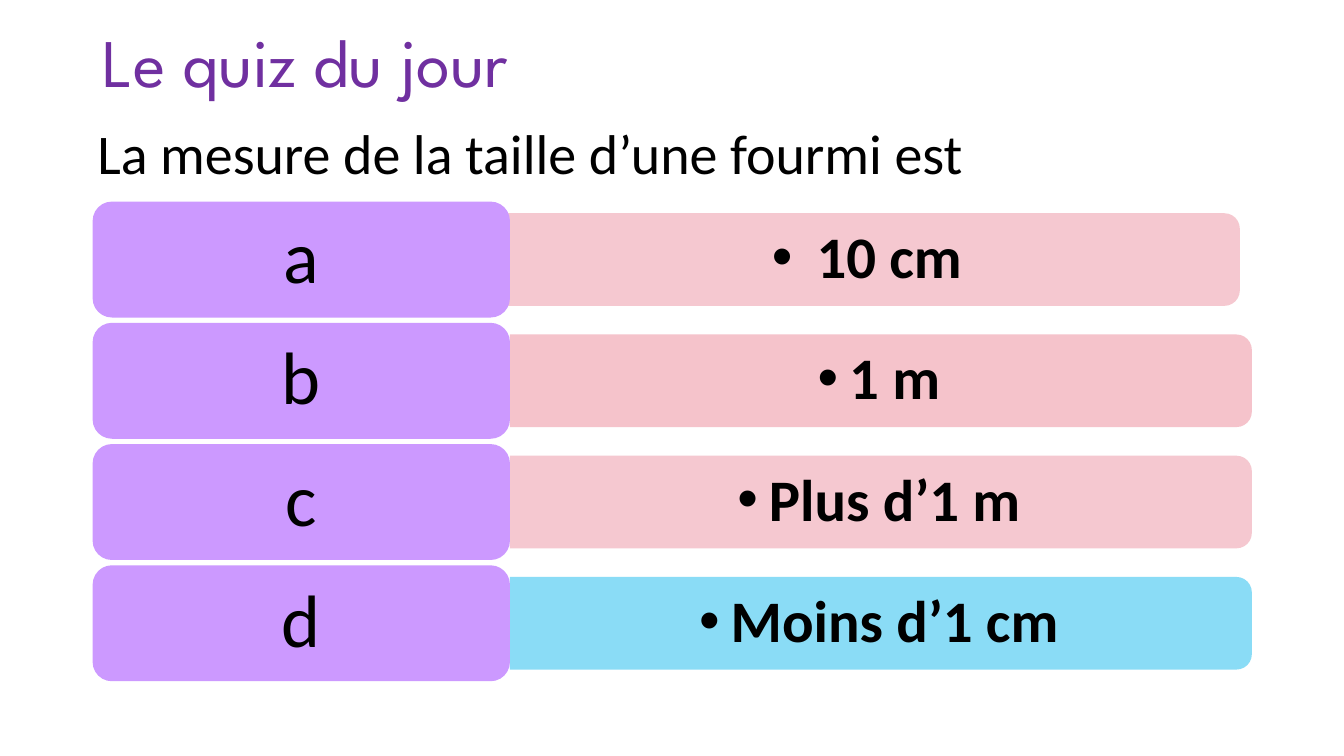
import pptx
import pptx.util
import pptx.dml.color
import pptx.enum.shapes
import pptx.enum.text
import pptx.oxml.ns
import lxml.etree

Pt = pptx.util.Pt
RGBColor = pptx.dml.color.RGBColor
MSO_SHAPE = pptx.enum.shapes.MSO_SHAPE
PP_ALIGN = pptx.enum.text.PP_ALIGN
MSO_ANCHOR = pptx.enum.text.MSO_ANCHOR
qn = pptx.oxml.ns.qn

PURPLE = RGBColor(0x70, 0x30, 0xA0)
LILAC = RGBColor(0xCC, 0x99, 0xFF)
PINK = RGBColor(0xF5, 0xC3, 0xCB)
BLUE = RGBColor(0x7E, 0xD9, 0xF6)
BLACK = RGBColor(0, 0, 0)

LABEL_LEFT, LABEL_WIDTH, LABEL_HEIGHT = 66.2, 298.1, 82.8
BAR_WIDTH, BAR_HEIGHT = 529.9, 66.2
ANSWER_WIDTH, ANSWER_HEIGHT = 527, 59.8
FIRST_TOP, ROW_PITCH = 144, 86.6

ANSWERS = [
    ("a", " 10 cm", 355.7, PINK, 90),
    ("b", "1 m", 364.3, PINK, 100),
    ("c", "Plus d’1 m", 364.3, PINK, 90),
    ("d", "Moins d’1 cm", 364.3, BLUE, 90),
]


class QuizSlide:
    def __init__(self, slide, font="Calibri", color=BLACK):
        self.slide = slide
        self.font = font
        self.color = color

    def set_text(self, shape, text, size, font=None, color=None, bold=False,
                 align=PP_ALIGN.CENTER, spacing=0.9, anchor=MSO_ANCHOR.MIDDLE):
        frame = shape.text_frame
        frame.word_wrap = True
        frame.vertical_anchor = anchor
        paragraph = frame.paragraphs[0]
        paragraph.text = text
        paragraph.alignment = align
        paragraph.line_spacing = spacing
        paragraph.font.name = font or self.font
        paragraph.font.size = Pt(size)
        paragraph.font.bold = bold
        paragraph.font.color.rgb = color or self.color
        return paragraph

    def text(self, left, top, width, height, text, size, **style):
        box = self.slide.shapes.add_textbox(Pt(left), Pt(top), Pt(width), Pt(height))
        return self.set_text(box, text, size, **style)

    def bullet(self, left, top, width, height, text, size):
        paragraph = self.text(left, top, width, height, text, size, bold=True)
        properties = paragraph._p.get_or_add_pPr()
        properties.set("marL", str(Pt(22.5)))
        properties.set("indent", str(-Pt(22.5)))
        lxml.etree.SubElement(properties, qn("a:buFont")).set("typeface", "Arial")
        lxml.etree.SubElement(properties, qn("a:buChar")).set("char", "•")
        properties.append(properties.find(qn("a:defRPr")))

    def block(self, kind, left, top, width, height, color, opacity=100):
        block = self.slide.shapes.add_shape(kind, Pt(left), Pt(top), Pt(width), Pt(height))
        block.shadow.inherit = False
        block.fill.solid()
        block.fill.fore_color.rgb = color
        block.line.fill.background()
        if opacity < 100:
            tint = block._element.spPr.find(qn("a:solidFill"))[0]
            lxml.etree.SubElement(tint, qn("a:alpha")).set("val", str(opacity * 1000))
        return block

    def bar(self, left, middle, color, opacity):
        bar = self.block(MSO_SHAPE.ROUND_2_SAME_RECTANGLE,
                         left + (BAR_WIDTH - BAR_HEIGHT) / 2, middle - BAR_WIDTH / 2,
                         BAR_HEIGHT, BAR_WIDTH, color, opacity)
        bar.rotation = 90

    def answer(self, top, letter, answer, left, color, opacity):
        middle = top + LABEL_HEIGHT / 2
        self.bar(left, middle, color, opacity)
        self.bullet(left, middle - ANSWER_HEIGHT / 2, ANSWER_WIDTH, ANSWER_HEIGHT, answer, 42)
        label = self.block(MSO_SHAPE.ROUNDED_RECTANGLE, LABEL_LEFT, top,
                           LABEL_WIDTH, LABEL_HEIGHT, LILAC)
        self.set_text(label, letter, 53)


def main():
    presentation = pptx.Presentation()
    presentation.slide_width = Pt(960)
    presentation.slide_height = Pt(540)
    quiz = QuizSlide(presentation.slides.add_slide(presentation.slide_layouts[6]))
    quiz.text(66, 19.4, 828, 55.4, "Le quiz du jour", 48.6,
              font="League Spartan", color=PURPLE, align=PP_ALIGN.LEFT)
    for row, answer in enumerate(ANSWERS):
        quiz.answer(FIRST_TOP + row * ROW_PITCH, *answer)
    quiz.text(48.2, 81.4, 661, 55.4, "La mesure de la taille d’une fourmi est", 40,
              spacing=1.0, anchor=MSO_ANCHOR.TOP)
    presentation.save("out.pptx")


if __name__ == "__main__":
    main()
